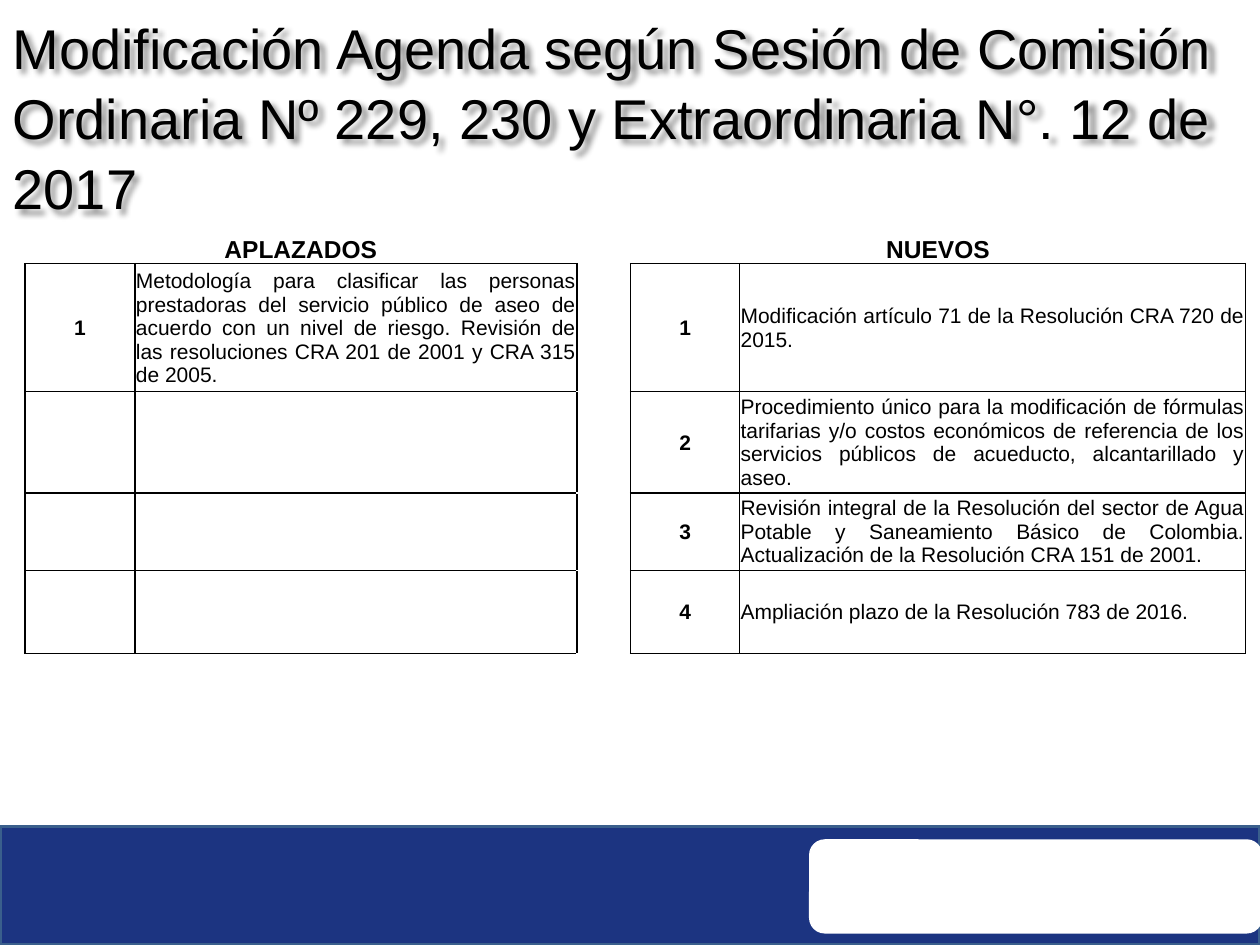
from lxml.etree import SubElement
from pptx import Presentation
from pptx.dml.color import RGBColor
from pptx.enum.shapes import MSO_SHAPE
from pptx.enum.text import MSO_ANCHOR, MSO_AUTO_SIZE, PP_ALIGN
from pptx.oxml import parse_xml
from pptx.oxml.ns import nsdecls, qn
from pptx.util import Cm, Pt

BLACK = RGBColor(0x00, 0x00, 0x00)
WHITE = RGBColor(0xFF, 0xFF, 0xFF)
NAVY = RGBColor(0x1C, 0x34, 0x81)
STEEL = RGBColor(0x3A, 0x5F, 0x8C)
FONT = "Arial"

TITLE = (
    "Modificación Agenda según Sesión de Comisión Ordinaria Nº 229, 230 "
    "y Extraordinaria N°. 12 de 2017"
)
POSTPONED = [
    "Metodología para clasificar las personas prestadoras del servicio público de aseo "
    "de acuerdo con un nivel de riesgo. Revisión de las resoluciones CRA 201 de 2001 "
    "y CRA 315 de 2005.",
]
NEW = [
    "Modificación artículo 71 de la Resolución CRA 720 de 2015.",
    "Procedimiento único para la modificación de fórmulas tarifarias y/o costos económicos "
    "de referencia de los servicios públicos de acueducto, alcantarillado y aseo.",
    "Revisión integral de la Resolución del sector de Agua Potable y Saneamiento Básico "
    "de Colombia. Actualización de la Resolución CRA 151 de 2001.",
    "Ampliación plazo de la Resolución 783 de 2016.",
]
COLUMN_WIDTHS = [2.22, 8.91, 1.08, 2.2, 10.2]
ROW_HEIGHTS = [0.76, 2.58, 2.04, 1.56, 1.68]
GAP_COLUMN = 2


def write(frame, text, size, bold, alignment):
    paragraph = frame.paragraphs[0]
    paragraph.alignment = alignment
    run = paragraph.add_run()
    run.text = text
    run.font.name = FONT
    run.font.size = Pt(size)
    run.font.bold = bold
    run.font.color.rgb = BLACK
    return paragraph


def add_borders(cell, sides):
    properties = cell._tc.get_or_add_tcPr()
    for position, side in enumerate(sides):
        line = parse_xml(
            f'<a:ln{side} {nsdecls("a")} w="12700"><a:solidFill>'
            f'<a:srgbClr val="{BLACK}"/></a:solidFill></a:ln{side}>'
        )
        properties.insert(position, line)


presentation = Presentation()
presentation.slide_width = Cm(25.4)
presentation.slide_height = Cm(19.05)
slide = presentation.slides.add_slide(presentation.slide_layouts[5])

band = slide.shapes.add_shape(MSO_SHAPE.RECTANGLE, Cm(0), Cm(16.66), Cm(25.4), Cm(2.39))
band.shadow.inherit = False
band.fill.solid()
band.fill.fore_color.rgb = NAVY
band.line.color.rgb = STEEL
band.line.width = Pt(2)

panel = slide.shapes.add_shape(
    MSO_SHAPE.ROUNDED_RECTANGLE, Cm(16.31), Cm(16.92), Cm(9.14), Cm(1.9)
)
panel.shadow.inherit = False
panel.fill.solid()
panel.fill.fore_color.rgb = WHITE
panel.line.fill.background()

title = slide.shapes.title
title.left, title.top, title.width, title.height = Cm(0), Cm(0.15), Cm(25.2), Cm(4.37)
title.text_frame.word_wrap = True
title.text_frame.auto_size = MSO_AUTO_SIZE.NONE
title.text_frame.vertical_anchor = MSO_ANCHOR.MIDDLE
title_paragraph = write(title.text_frame, TITLE, 32, False, PP_ALIGN.LEFT)
title_paragraph.line_spacing = 1.04
effects = SubElement(title._element.spPr, qn("a:effectLst"))
shadow = SubElement(
    effects, qn("a:outerShdw"), blurRad="38100", dist="38100", dir="2700000", algn="tl"
)
shadow_color = SubElement(shadow, qn("a:srgbClr"), val=str(BLACK))
SubElement(shadow_color, qn("a:alpha"), val="43000")

table = slide.shapes.add_table(
    len(ROW_HEIGHTS), len(COLUMN_WIDTHS), Cm(0.5), Cm(4.52),
    Cm(sum(COLUMN_WIDTHS)), Cm(sum(ROW_HEIGHTS)),
).table
table.first_row = False
table.horz_banding = False
for column, width in zip(table.columns, COLUMN_WIDTHS):
    column.width = Cm(width)
for row, height in zip(table.rows, ROW_HEIGHTS):
    row.height = Cm(height)

for row_index in range(len(ROW_HEIGHTS)):
    for column_index in range(len(COLUMN_WIDTHS)):
        cell = table.cell(row_index, column_index)
        cell.fill.background()
        cell.margin_left = cell.margin_right = cell.margin_top = Cm(0.02)
        cell.margin_bottom = Cm(0)
        cell.vertical_anchor = MSO_ANCHOR.MIDDLE if row_index else MSO_ANCHOR.BOTTOM
        if column_index == GAP_COLUMN:
            add_borders(cell, "LR" if row_index else "")
        else:
            add_borders(cell, "LRTB" if row_index else "B")

for first_column, heading, topics in ((0, "APLAZADOS", POSTPONED), (3, "NUEVOS", NEW)):
    header = table.cell(0, first_column)
    header.merge(table.cell(0, first_column + 1))
    write(header.text_frame, heading, 14, True, PP_ALIGN.CENTER)
    for number, topic in enumerate(topics, start=1):
        number_cell = table.cell(number, first_column)
        topic_cell = table.cell(number, first_column + 1)
        write(number_cell.text_frame, str(number), 12, True, PP_ALIGN.CENTER)
        write(topic_cell.text_frame, topic, 12, False, PP_ALIGN.JUSTIFY)

presentation.save("out.pptx")
